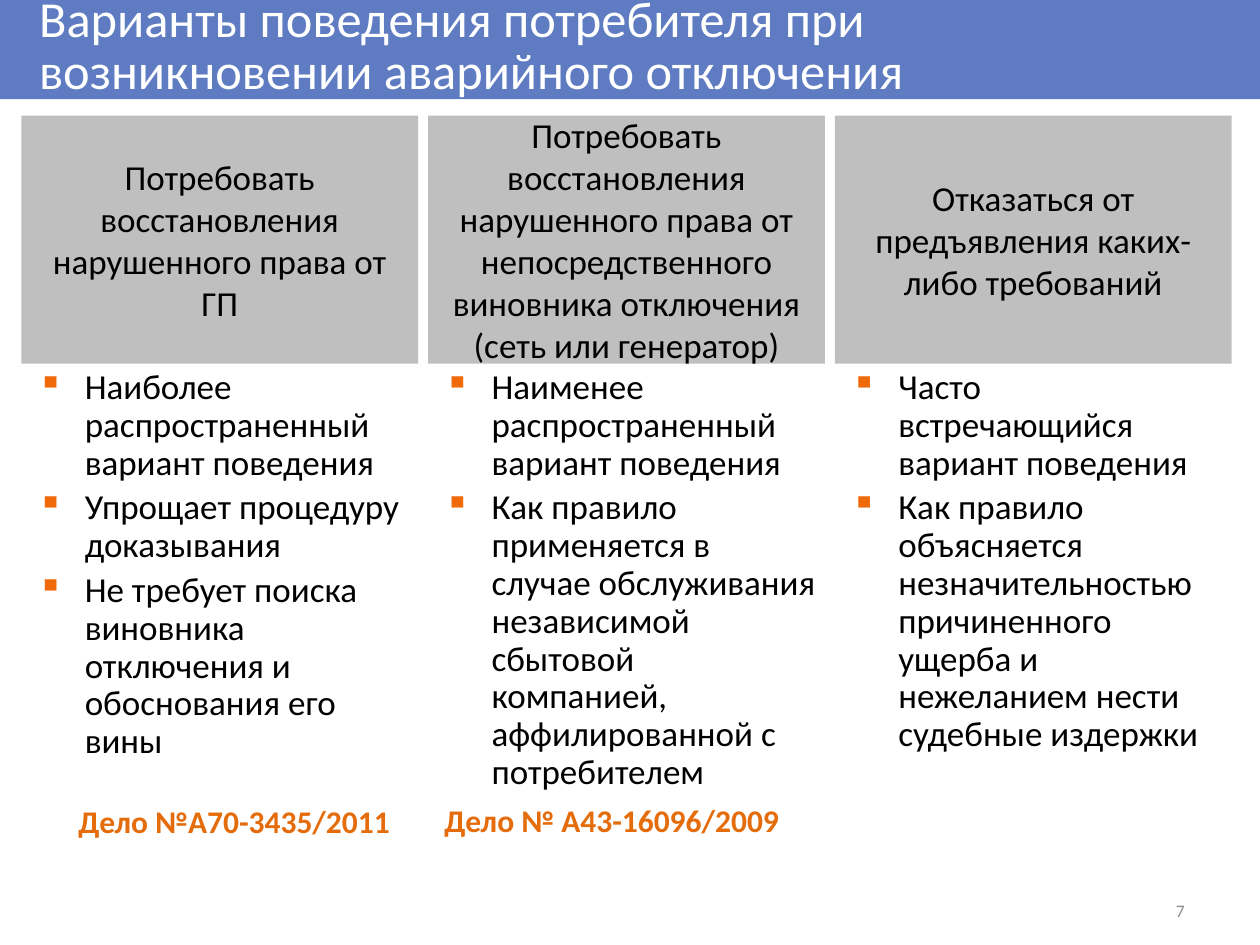
from lxml.etree import SubElement
from pptx import Presentation
from pptx.dml.color import RGBColor
from pptx.enum.shapes import MSO_SHAPE
from pptx.enum.text import MSO_ANCHOR, MSO_AUTO_SIZE, PP_ALIGN
from pptx.oxml.ns import qn
from pptx.util import Cm, Pt

BLUE, GRAY, ORANGE, BULLET = "5F7CC3", "BFBFBF", "E46C0A", "F0690A"
TITLE = "Варианты поведения потребителя при возникновении аварийного отключения"
LEFT, STEP = 0.43, 8.2
COLUMNS = [
    ("Потребовать восстановления нарушенного права от ГП", 7.8, 8.28,
     ["Наиболее распространенный вариант поведения",
      "Упрощает процедуру доказывания",
      "Не требует поиска виновника отключения и обоснования его вины"]),
    ("Потребовать восстановления нарушенного права от непосредственного "
     "виновника отключения (сеть или генератор)", 8, 8.89,
     ["Наименее распространенный вариант поведения",
      "Как правило применяется в случае обслуживания независимой сбытовой "
      "компанией, аффилированной с потребителем"]),
    ("Отказаться от предъявления каких-либо требований", 8, 8.13,
     ["Часто встречающийся вариант поведения",
      "Как правило объясняется незначительностью причиненного ущерба "
      "и нежеланием нести судебные издержки"]),
]


def color(code):
    """Turn a hex string into a colour."""
    return RGBColor.from_string(code)


class Deck:
    """Hold the text style and the current slide."""

    def __init__(self, font="Calibri", size=20):
        """Open a deck with one blank slide."""
        self.font, self.size = font, size
        self.file = Presentation()
        self.file.slide_width, self.file.slide_height = Cm(25.4), Cm(19.05)
        self.slide = self.file.slides.add_slide(self.file.slide_layouts[6])

    def text(self, para, words, size=None, ink="000000", bold=False):
        """Add one styled run to a paragraph."""
        run = para.add_run()
        run.text = words
        run.font.name, run.font.size = self.font, Pt(size or self.size)
        run.font.bold = bold
        run.font.color.rgb = color(ink)

    def block(self, x, y, w, h, fill, words=""):
        """Draw a filled rectangle with optional centred text."""
        shape = self.slide.shapes.add_shape(
            MSO_SHAPE.RECTANGLE, Cm(x), Cm(y), Cm(w), Cm(h))
        shape.shadow.inherit = False
        shape.fill.solid()
        shape.fill.fore_color.rgb = color(fill)
        shape.line.fill.background()
        if words:
            frame = shape.text_frame
            frame.word_wrap = True
            frame.vertical_anchor = MSO_ANCHOR.MIDDLE
            para = frame.paragraphs[0]
            para.alignment = PP_ALIGN.CENTER
            self.text(para, words)

    def frame(self, x, y, w, h, grow=False):
        """Add a wrapping text box and return its frame."""
        frame = self.slide.shapes.add_textbox(
            Cm(x), Cm(y), Cm(w), Cm(h)).text_frame
        frame.word_wrap = True
        if grow:
            frame.auto_size = MSO_AUTO_SIZE.SHAPE_TO_FIT_TEXT
        else:
            frame.vertical_anchor = MSO_ANCHOR.MIDDLE
        return frame

    def title(self, x, y, w, h, words):
        """Add the heading with narrow margins."""
        frame = self.frame(x, y, w, h)
        frame.margin_left = frame.margin_right = Cm(0.1)
        frame.margin_top = frame.margin_bottom = Cm(0.1)
        para = frame.paragraphs[0]
        para.line_spacing = 0.85
        self.text(para, words, 28.8, "FFFFFF")

    def points(self, x, y, w, h, items):
        """Add a bulleted list."""
        frame = self.frame(x, y, w, h, True)
        for i, item in enumerate(items):
            para = frame.add_paragraph() if i else frame.paragraphs[0]
            props = para._p.get_or_add_pPr()
            props.set("marL", str(Cm(0.95)))
            props.set("indent", str(-Cm(0.95)))
            tint = SubElement(props, qn("a:buClr"))
            SubElement(tint, qn("a:srgbClr"), val=BULLET)
            SubElement(props, qn("a:buChar"), char="▪")
            para.line_spacing = 0.9
            if i:
                para.space_before = Pt(4)
            self.text(para, item)

    def case(self, x, y, w, h, words, inset=0, lead=1.0):
        """Add a bold court case number."""
        para = self.frame(x, y, w, h, True).paragraphs[0]
        para._p.get_or_add_pPr().set("marL", str(Cm(inset)))
        para.line_spacing = lead
        self.text(para, words, 18, ORANGE, True)

    def number(self, x, y, w, h, words):
        """Add the page number."""
        para = self.frame(x, y, w, h).paragraphs[0]
        para.alignment = PP_ALIGN.RIGHT
        self.text(para, words, 10, "8C8C8C")


def main():
    """Build the slide and save it."""
    deck = Deck()
    deck.block(0, 0, 25.4, 2, BLUE)
    deck.title(0.69, -0.03, 22, 2, TITLE)
    for i, (head, width, height, items) in enumerate(COLUMNS):
        x = LEFT + i * STEP
        deck.block(x, 2.33, 8, 5, GRAY, head)
        deck.points(x + 0.08, 7.32, width, height, items)
    deck.case(0.71, 16.13, 7.6, 0.94, "Дело №А70-3435/2011", 0.62, 0.9)
    deck.case(8.71, 16.03, 7.8, 1.02, "Дело № А43-16096/2009")
    deck.number(23.01, 18.06, 1.12, 0.61, "7")
    deck.file.save("out.pptx")


if __name__ == "__main__":
    main()
